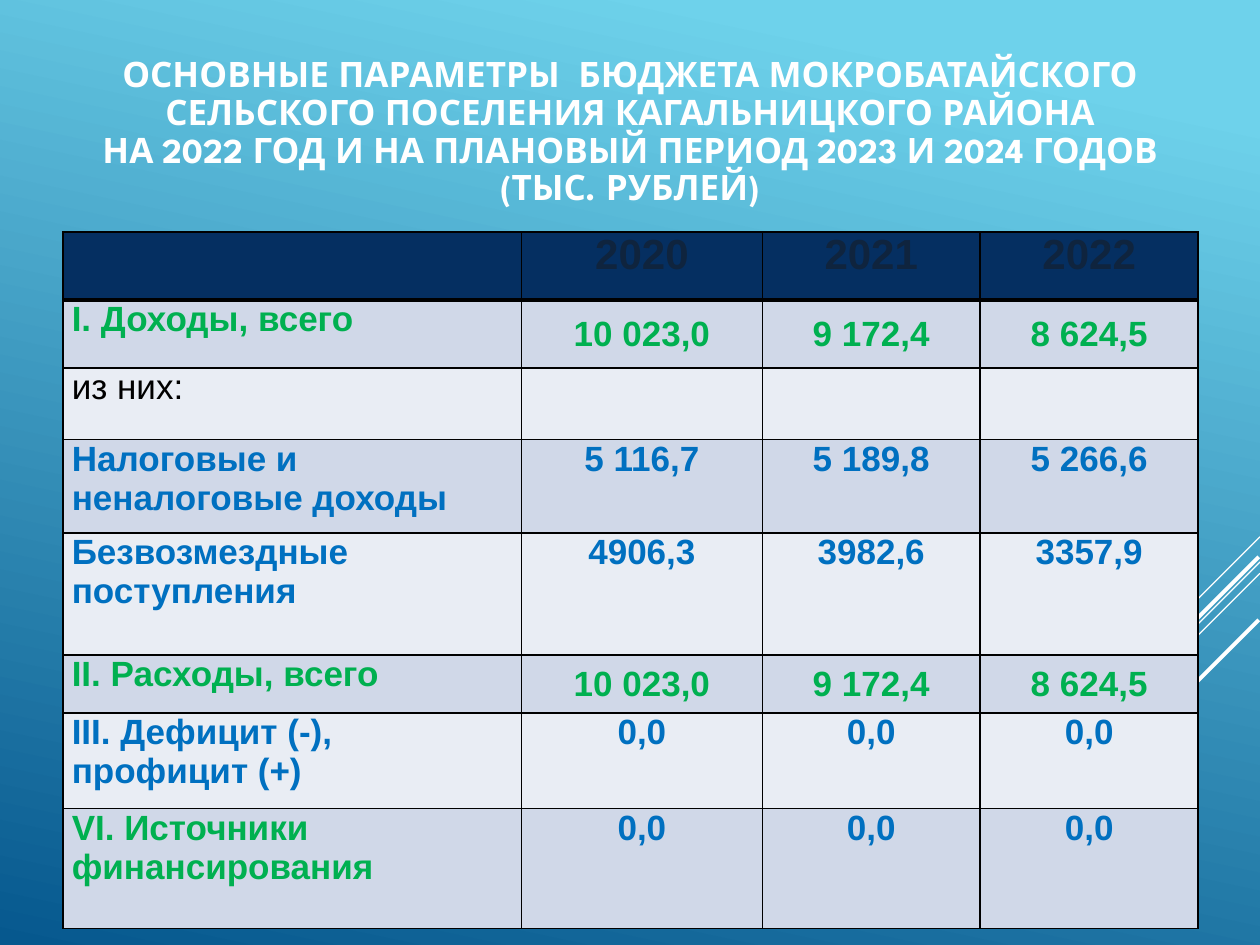
from dataclasses import dataclass

from lxml import etree
from pptx import Presentation
from pptx.dml.color import RGBColor
from pptx.enum.shapes import MSO_CONNECTOR
from pptx.enum.text import MSO_ANCHOR, PP_ALIGN
from pptx.oxml.ns import qn
from pptx.util import Inches, Pt

STRAIGHT = MSO_CONNECTOR.STRAIGHT
LEFT, CENTER = PP_ALIGN.LEFT, PP_ALIGN.CENTER
TOP, MIDDLE = MSO_ANCHOR.TOP, MSO_ANCHOR.MIDDLE


@dataclass(frozen=True)
class Theme:
    """Colours, fonts and type sizes of the slide."""
    sky: str = "6ED2EB"
    deep: str = "06588E"
    white: str = "FFFFFF"
    black: str = "000000"
    header: str = "052F61"
    year: str = "0F243E"
    bands: tuple = ("D0D8E8", "E9EDF4")
    total: str = "00B050"
    detail: str = "0070C0"
    title_font: str = "League Spartan"
    table_font: str = "Arial"
    body_size: int = 20
    year_size: int = 24


THEME = Theme()

TITLE = (
    "ОСНОВНЫЕ ПАРАМЕТРЫ  БЮДЖЕТА МОКРОБАТАЙСКОГО СЕЛЬСКОГО ПОСЕЛЕНИЯ КАГАЛЬНИЦКОГО РАЙОНА\n"
    "НА 2022 ГОД И НА ПЛАНОВЫЙ ПЕРИОД 2023 И 2024 ГОДОВ\n"
    "(ТЫС. РУБЛЕЙ)"
)
YEARS = ("", "2020", "2021", "2022")
TOTALS = ("10 023,0", "9 172,4", "8 624,5")
ZEROS = ("0,0",) * 3
BUDGET = (
    ("I. Доходы, всего", THEME.total, TOTALS, THEME.total),
    ("из них:", THEME.black, ("",) * 3, THEME.black),
    ("Налоговые и неналоговые доходы", THEME.detail, ("5 116,7", "5 189,8", "5 266,6"), THEME.detail),
    ("Безвозмездные поступления", THEME.detail, ("4906,3", "3982,6", "3357,9"), THEME.detail),
    ("II. Расходы, всего", THEME.total, TOTALS, THEME.total),
    ("III. Дефицит (-), профицит (+)", THEME.detail, ZEROS, THEME.detail),
    ("VI. Источники финансирования", THEME.total, ZEROS, THEME.detail),
)
COLUMN_WIDTHS = (3.64, 1.91, 1.73, 1.73)
ROW_HEIGHTS = (0.54, 0.54, 0.57, 0.74, 0.97, 0.46, 0.76, 0.95)
RAYS = (
    (10, 4.26, 0.83, 0.75),
    (10, 4.46, 2.7, 0.75),
    (10, 4.55, 1.72, 0.75),
    (9.99, 4.42, 1.57, 2.25),
    (9.99, 4.92, 1.14, 2.25),
)


def write(frame, text, *, font=THEME.table_font, size=THEME.body_size, color=THEME.black,
          bold=True, align=LEFT, spacing=None):
    """Write one formatted paragraph into a text frame."""
    paragraph = frame.paragraphs[0]
    paragraph.text = text
    paragraph.alignment = align
    paragraph.line_spacing = spacing
    for run in paragraph.runs:
        run.font.name = font
        run.font.size = Pt(size)
        run.font.bold = bold
        run.font.color.rgb = RGBColor.from_string(color)


def paint_background(slide):
    """Fill the background with the sky gradient."""
    fill = slide.background.fill
    fill.gradient()
    fill.gradient_angle = 258
    for stop, position, color in zip(fill.gradient_stops, (0.1, 1), (THEME.sky, THEME.deep)):
        stop.position = position
        stop.color.rgb = RGBColor.from_string(color)


def add_ray(slide, x, y, run, weight):
    """Draw a diagonal ray going down and left."""
    ray = slide.shapes.add_connector(
        STRAIGHT, Inches(x), Inches(y), Inches(x - run), Inches(y + run))
    ray.line.color.rgb = RGBColor.from_string(THEME.white)
    ray.line.width = Pt(weight)
    etree.SubElement(ray._element.spPr, qn("a:effectLst"))


def add_title(slide):
    """Add the centred heading."""
    frame = slide.shapes.add_textbox(Inches(0.5), Inches(0.32), Inches(9), Inches(1.8)).text_frame
    frame.word_wrap = True
    frame.vertical_anchor = MIDDLE
    frame.margin_bottom = Inches(0.38)
    write(frame, TITLE, font=THEME.title_font, color=THEME.white, align=CENTER, spacing=0.9)


def set_borders(cell, top, bottom):
    """Give a cell black borders, with top and bottom weights in points."""
    properties = cell._tc.get_or_add_tcPr()
    for side, weight in (("L", 1), ("R", 1), ("T", top), ("B", bottom)):
        line = etree.SubElement(properties, qn(f"a:ln{side}"), w=str(Pt(weight)))
        fill = etree.SubElement(line, qn("a:solidFill"))
        etree.SubElement(fill, qn("a:srgbClr"), val=THEME.black)


def fill_cell(cell, text, fill, *, top=1, bottom=1, anchor=TOP, inset=0.07, **text_format):
    """Set borders, fill, margins and text of a cell."""
    set_borders(cell, top, bottom)
    cell.fill.solid()
    cell.fill.fore_color.rgb = RGBColor.from_string(fill)
    cell.margin_left = cell.margin_right = Inches(inset)
    cell.margin_top = cell.margin_bottom = 0
    cell.vertical_anchor = anchor
    write(cell.text_frame, text, **text_format)


def add_budget_table(slide):
    """Add the table of budget figures by year."""
    table = slide.shapes.add_table(
        len(ROW_HEIGHTS), len(COLUMN_WIDTHS),
        Inches(0.5), Inches(1.84), Inches(9), Inches(5.53)).table
    table.first_row = table.horz_banding = False
    for column, width in zip(table.columns, COLUMN_WIDTHS):
        column.width = Inches(width)
    for row, height in zip(table.rows, ROW_HEIGHTS):
        row.height = Inches(height)
    for column, year in enumerate(YEARS):
        fill_cell(table.cell(0, column), year, THEME.header, bottom=3,
                  size=THEME.year_size, color=THEME.year, align=CENTER)
    for row, (label, label_color, amounts, amount_color) in enumerate(BUDGET, 1):
        band = THEME.bands[(row - 1) % 2]
        top = 3 if row == 1 else 1
        is_total = amounts is TOTALS
        fill_cell(table.cell(row, 0), label, band, top=top,
                  color=label_color, bold=label_color != THEME.black)
        for column, amount in enumerate(amounts, 1):
            fill_cell(table.cell(row, column), amount, band, top=top,
                      anchor=MIDDLE if is_total else TOP, inset=0.01 if is_total else 0.07,
                      color=amount_color, align=CENTER)


def main():
    """Build and save the slide."""
    presentation = Presentation()
    presentation.slide_width, presentation.slide_height = Inches(10), Inches(7.5)
    slide = presentation.slides.add_slide(presentation.slide_layouts[6])
    paint_background(slide)
    for ray in RAYS:
        add_ray(slide, *ray)
    add_title(slide)
    add_budget_table(slide)
    presentation.save("out.pptx")


if __name__ == "__main__":
    main()
